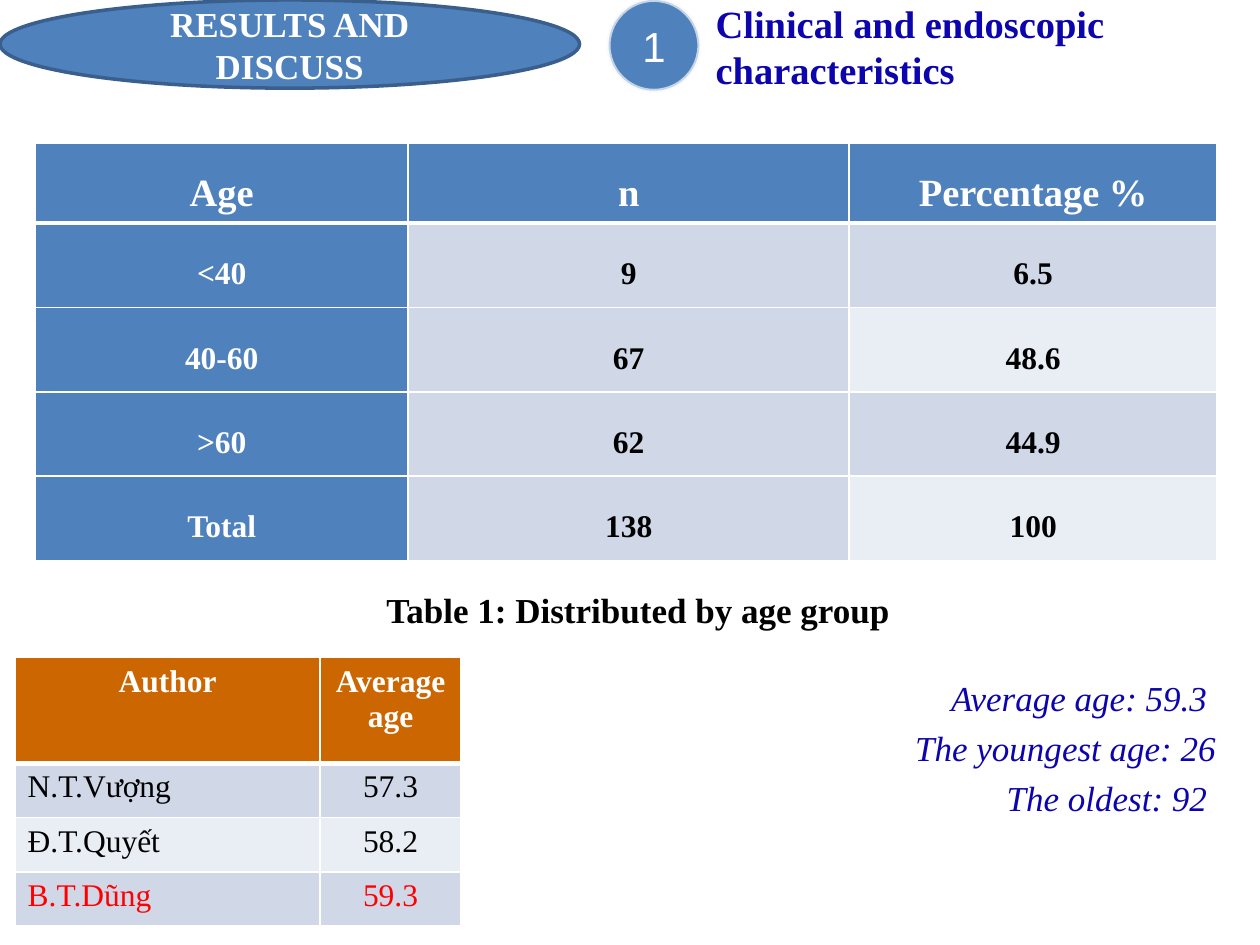
from lxml import etree
from pptx import Presentation
from pptx.dml.color import RGBColor
from pptx.enum.shapes import MSO_SHAPE
from pptx.enum.text import MSO_ANCHOR, MSO_AUTO_SIZE, PP_ALIGN
from pptx.oxml.ns import qn
from pptx.util import Inches, Pt

OVAL = MSO_SHAPE.OVAL
TOP, MIDDLE = MSO_ANCHOR.TOP, MSO_ANCHOR.MIDDLE
NO_AUTOFIT = MSO_AUTO_SIZE.NONE
LEFT, CENTER, RIGHT = PP_ALIGN.LEFT, PP_ALIGN.CENTER, PP_ALIGN.RIGHT

WHITE = RGBColor(0xFF, 0xFF, 0xFF)
BLACK = RGBColor(0x00, 0x00, 0x00)
RED = RGBColor(0xFF, 0x00, 0x00)
BLUE = RGBColor(0x4F, 0x81, 0xBD)
DARK_BLUE = RGBColor(0x3A, 0x5F, 0x8C)
INK = RGBColor(0x0C, 0x04, 0xAC)
ORANGE = RGBColor(0xCC, 0x66, 0x00)
PALE = RGBColor(0xF8, 0xF8, 0xF8)
BANDS = (RGBColor(0xD0, 0xD8, 0xE8), RGBColor(0xE9, 0xED, 0xF4))

SERIF, SANS = "Times New Roman", "Arial"
WIDTH, HEIGHT = Inches(10), Inches(7.5)

AGE_ROWS = [
    ("Age", "n", "Percentage %"),
    ("<40", "9", "6.5"),
    ("40-60", "67", "48.6"),
    (">60", "62", "44.9"),
    ("Total", "138", "100"),
]
AUTHOR_ROWS = [
    ("Author", "Average age"),
    ("N.T.Vượng", "57.3"),
    ("Đ.T.Quyết", "58.2"),
    ("B.T.Dũng", "59.3"),
]
AGE_FACTS = ("Average age: 59.3 ", "The youngest age: 26", "The oldest: 92 ")


def across(percent):
    """Return a share of the slide's width."""
    return round(WIDTH * percent / 100)


def down(percent):
    """Return a share of the slide's height."""
    return round(HEIGHT * percent / 100)


def box(x, y, w, h):
    """Return left, top, width and height from percentages of the slide."""
    return across(x), down(y), across(w), down(h)


def write(tf, lines, size, color, align, font=SERIF, bold=False, italic=False):
    """Fill a text frame with one paragraph per line and return them."""
    tf.text = "\n".join(lines)
    for p in tf.paragraphs:
        p.alignment = align
        p.font.name, p.font.size = font, Pt(size)
        p.font.bold, p.font.italic = bold, italic
        p.font.color.rgb = color
    return tf.paragraphs


def set_frame(tf, anchor, inset=0):
    """Wrap the text with a fixed size, an anchor and equal insets."""
    tf.word_wrap, tf.auto_size, tf.vertical_anchor = True, NO_AUTOFIT, anchor
    tf.margin_left = tf.margin_right = Inches(inset)
    tf.margin_top = tf.margin_bottom = Inches(inset / 2)


def place(sp, bounds):
    """Move and size a placeholder."""
    sp.left, sp.top, sp.width, sp.height = bounds


def add_title(slide, text):
    """Put the heading in the title placeholder."""
    sp = slide.shapes.title
    place(sp, box(55.8, 0, 44.2, 10))
    set_frame(sp.text_frame, TOP, 0.1)
    sp.text_frame.margin_top = 0
    write(sp.text_frame, [text], 22, INK, LEFT, bold=True)


def add_caption(slide, text):
    """Put the table caption in the body placeholder without a bullet."""
    sp = slide.placeholders[1]
    place(sp, box(20.1, 61.6, 61.1, 7.47))
    set_frame(sp.text_frame, TOP, 0.1)
    p = write(sp.text_frame, [text], 20, BLACK, CENTER, bold=True)[0]
    p.space_before = Pt(4)
    pPr = p._p.get_or_add_pPr()
    pPr.set("marL", "0")
    pPr.set("indent", "0")
    pPr.insert_element_before(pPr.makeelement(qn("a:buNone")), "a:tabLst", "a:defRPr", "a:extLst")


def add_ellipse(slide, bounds, line_color, line_width, lines, size, **style):
    """Add a blue ellipse with centred white text."""
    sp = slide.shapes.add_shape(OVAL, *bounds)
    sp.shadow.inherit = False
    sp.fill.solid()
    sp.fill.fore_color.rgb = BLUE
    sp.line.color.rgb = line_color
    sp.line.width = Pt(line_width)
    set_frame(sp.text_frame, MIDDLE)
    write(sp.text_frame, lines, size, WHITE, CENTER, **style)
    return sp


def fade_line(sp, opacity):
    """Make a shape's outline partly transparent."""
    color = sp.line._ln.find(".//" + qn("a:srgbClr"))
    etree.SubElement(color, qn("a:alpha"), val=str(opacity * 1000))


def add_facts(slide, lines):
    """Add the right-aligned age facts."""
    tf = slide.shapes.add_textbox(*box(29.5, 70.93, 68, 23.07)).text_frame
    set_frame(tf, TOP, 0.1)
    for p in write(tf, lines, 20, INK, RIGHT, italic=True):
        p.space_before = Pt(4.6)


def set_borders(cell, row):
    """Draw white cell borders, thick below the header."""
    tcPr = cell._tc.get_or_add_tcPr()
    thick = {(0, "B"), (1, "T")}
    for side in "LRTB":
        width = Pt(3 if (row, side) in thick else 1)
        ln = etree.SubElement(tcPr, qn(f"a:ln{side}"), w=str(width))
        fill = etree.SubElement(ln, qn("a:solidFill"))
        etree.SubElement(fill, qn("a:srgbClr"), val=str(WHITE))


def add_table(slide, x, y, columns, row_heights, rows, format_cell):
    """Add a bordered table whose cells are formatted by a function."""
    bounds = box(x, y, sum(columns), sum(row_heights))
    table = slide.shapes.add_table(len(rows), len(columns), *bounds).table
    for column, width in zip(table.columns, columns):
        column.width = across(width)
    for r, (values, height) in enumerate(zip(rows, row_heights)):
        table.rows[r].height = down(height)
        for c, value in enumerate(values):
            cell = table.cell(r, c)
            set_borders(cell, r)
            cell.fill.solid()
            cell.fill.fore_color.rgb = format_cell(cell, value, r, c)


def format_age_cell(cell, value, r, c):
    """Write a cell of the age table and return its fill."""
    heading = r == 0 or c == 0
    cell.vertical_anchor = MIDDLE
    cell.margin_left = cell.margin_right = Inches(0.07)
    cell.margin_top = cell.margin_bottom = 0
    size, color = 18 if r else 22, WHITE if heading else BLACK
    p = write(cell.text_frame, [value], size, color, CENTER, bold=True)[0]
    p.line_spacing = 1.5
    if heading:
        return BLUE
    return BANDS[0] if c == 1 else BANDS[(r - 1) % 2]


def format_author_cell(cell, value, r, c):
    """Write a cell of the author table and return its fill."""
    color = {0: WHITE, len(AUTHOR_ROWS) - 1: RED}.get(r, BLACK)
    align = LEFT if r and c == 0 else CENTER
    write(cell.text_frame, [value], 18, color, align, bold=r == 0)
    return BANDS[(r - 1) % 2] if r else ORANGE


def main():
    """Build the slide and save it."""
    prs = Presentation()
    prs.slide_width, prs.slide_height = WIDTH, HEIGHT
    slide = prs.slides.add_slide(prs.slide_layouts[1])
    add_title(slide, "Clinical and endoscopic characteristics")
    add_caption(slide, "Table 1: Distributed by age group")
    badge = add_ellipse(slide, box(48.3, 0, 7.2, 9.6), PALE, 2.25, ["1"], 24, font=SANS)
    fade_line(badge, 70)
    add_facts(slide, AGE_FACTS)
    add_table(slide, 1.2, 69.6, (24.2, 11.2), (11.2,) + (5.73,) * 3, AUTHOR_ROWS, format_author_cell)
    add_ellipse(slide, box(0, 0, 46, 9.33), DARK_BLUE, 2, ["RESULTS AND", "DISCUSS"], 20, bold=True)
    add_table(slide, 2.8, 15.2, (29.6, 35, 29.2), (8.4,) + (8.93,) * 4, AGE_ROWS, format_age_cell)
    prs.save("out.pptx")


if __name__ == "__main__":
    main()
